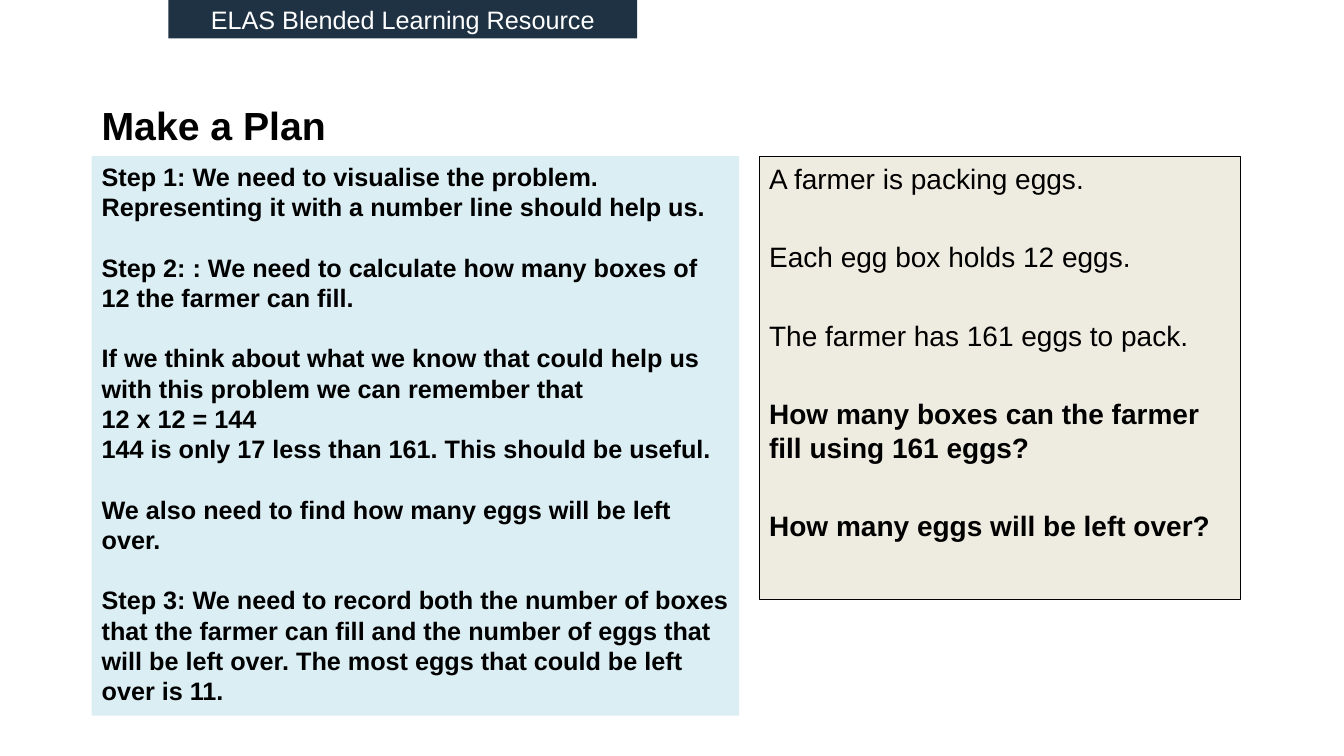
from pptx import Presentation
from pptx.dml.color import RGBColor
from pptx.enum.shapes import MSO_SHAPE
from pptx.enum.text import MSO_ANCHOR, PP_ALIGN
from pptx.util import Inches, Pt

RECTANGLE = MSO_SHAPE.RECTANGLE
TOP, MIDDLE = MSO_ANCHOR.TOP, MSO_ANCHOR.MIDDLE
LEFT, CENTER = PP_ALIGN.LEFT, PP_ALIGN.CENTER

FONT = "Arial"
BLACK, WHITE = "000000", "FFFFFF"
NAVY, PALE_BLUE, CREAM = "1F3244", "DBEEF4", "EEECE1"

# Shared grid lines, in inches
MARGIN, BODY_TOP = 0.91, 1.55

# Each inner list is a group of paragraphs; a gap opens between groups
PLAN_STEPS = [
    ["Step 1: We need to visualise the problem. Representing it with a "
     "number line should help us."],
    ["Step 2: : We need to calculate how many boxes of 12 the farmer can fill."],
    ["If we think about what we know that could help us with this problem "
     "we can remember that",
     "12 x 12 = 144",
     "144 is only 17 less than 161. This should be useful."],
    ["We also need to find how many eggs will be left over."],
    ["Step 3: We need to record both the number of boxes that the farmer can "
     "fill and the number of eggs that will be left over. The most eggs that "
     "could be left over is 11."],
]
FACTS = ["A farmer is packing eggs.", "Each egg box holds 12 eggs.",
         "The farmer has 161 eggs to pack."]
QUESTIONS = ["How many boxes can the farmer fill using 161 eggs?",
             "How many eggs will be left over?"]


def color(hex_value):
    return RGBColor.from_string(hex_value)


def add_panel(slide, box, fill, line=None):
    panel = slide.shapes.add_shape(RECTANGLE, *map(Inches, box))
    panel.shadow.inherit = False
    panel.fill.solid()
    panel.fill.fore_color.rgb = color(fill)
    if line:
        panel.line.color.rgb = color(line)
        panel.line.width = Pt(0.75)
    else:
        panel.line.fill.background()
    return panel


def write(shape, groups, size, bold=False, ink=BLACK, gap=0,
          align=LEFT, anchor=TOP):
    frame = shape.text_frame
    frame.word_wrap = True
    frame.vertical_anchor = anchor
    frame.text = "\n".join(line for group in groups for line in group)
    group_starts = [i == 0 for group in groups for i in range(len(group))]
    for index, paragraph in enumerate(frame.paragraphs):
        paragraph.alignment = align
        if index and group_starts[index]:
            paragraph.space_before = Pt(gap)
        for run in paragraph.runs:
            run.font.name, run.font.size = FONT, Pt(size)
            run.font.bold = bold
            run.font.color.rgb = color(ink)
    return frame


def add_banner(slide, box):
    banner = add_panel(slide, box, NAVY)
    write(banner, [["ELAS Blended Learning Resource"]], 18, ink=WHITE,
          align=CENTER, anchor=MIDDLE)


def add_heading(slide, box):
    heading = slide.shapes.add_textbox(*map(Inches, box))
    write(heading, [["Make a Plan"]], 28, bold=True, anchor=MIDDLE)


def add_plan(slide, box):
    write(add_panel(slide, box, PALE_BLUE), PLAN_STEPS, 18, bold=True, gap=21.6)


def add_problem(slide, box):
    problem = add_panel(slide, box, CREAM, line=BLACK)
    frame = write(problem, [[line] for line in FACTS + QUESTIONS], 20, gap=32)
    for question in frame.paragraphs[len(FACTS):]:
        question.runs[0].font.bold = True


def main():
    deck = Presentation()
    deck.slide_width, deck.slide_height = Inches(13.33), Inches(7.5)
    slide = deck.slides.add_slide(deck.slide_layouts[6])
    add_heading(slide, (MARGIN, 0.92, 9, 0.64))
    add_plan(slide, (MARGIN, BODY_TOP, 6.42, 5.55))
    add_banner(slide, (1.67, 0, 4.65, 0.38))
    add_problem(slide, (7.53, BODY_TOP, 4.77, 4.4))
    deck.save("out.pptx")


if __name__ == "__main__":
    main()
